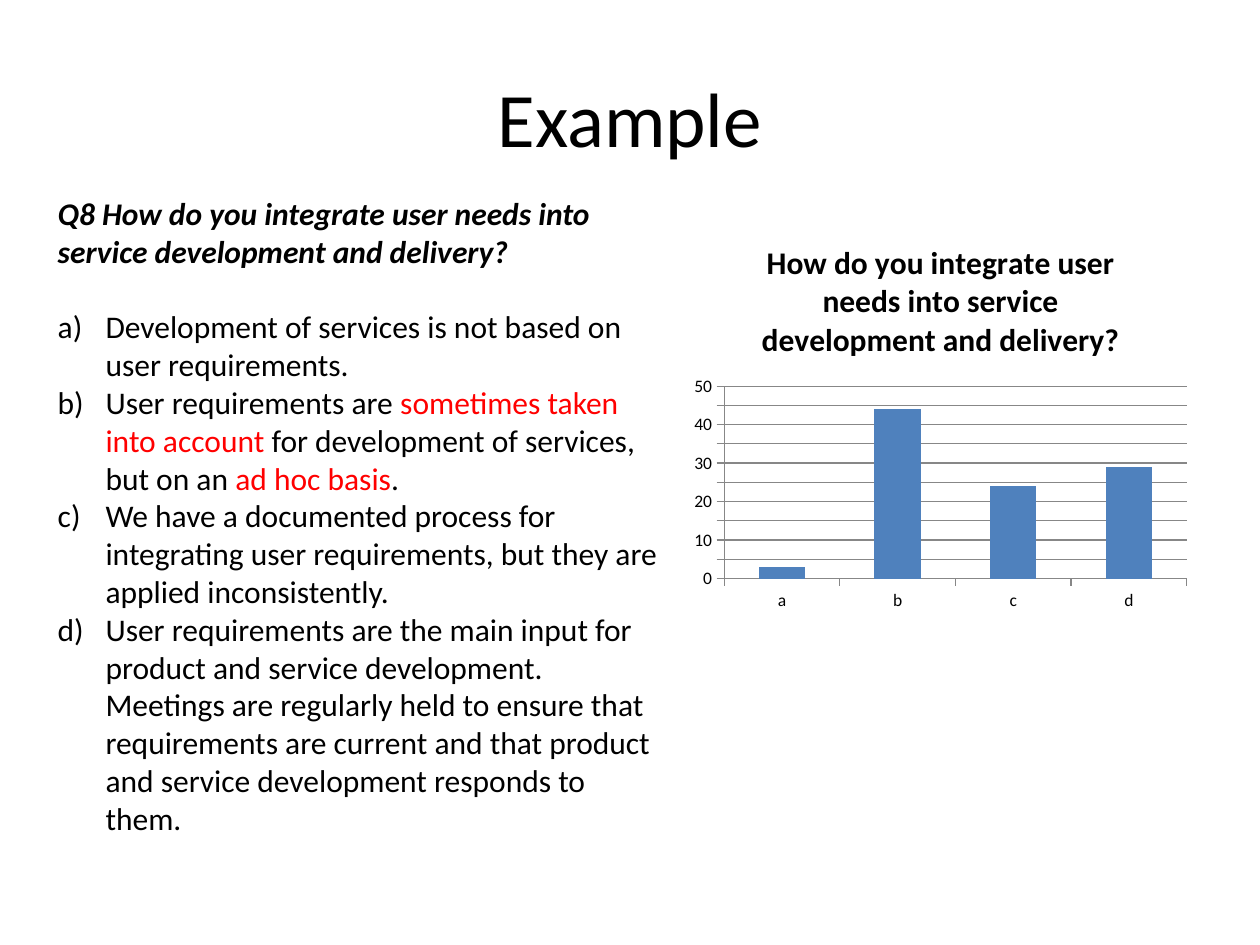
from pptx import Presentation
from pptx.chart.data import CategoryChartData
from pptx.dml.color import RGBColor
from pptx.enum.chart import XL_CHART_TYPE as ChartType, XL_TICK_MARK as Tick
from pptx.enum.text import MSO_ANCHOR as Anchor, PP_ALIGN as Align
from pptx.oxml.ns import qn
from pptx.util import Inches, Pt

BLACK = RGBColor(0x00, 0x00, 0x00)
RED = RGBColor(0xFF, 0x00, 0x00)
BLUE = RGBColor(0x4F, 0x81, 0xBD)
GREY = RGBColor(0x87, 0x87, 0x87)

QUESTION = "How do you integrate user needs into service development and delivery?"
# Each answer is a list of (text, colour) runs
ANSWERS = [
    [("Development of services is not based on user requirements.", BLACK)],
    [("User requirements are ", BLACK), ("sometimes taken into account ", RED),
     ("for development of services, but on an ", BLACK),
     ("ad hoc basis", RED), (".", BLACK)],
    [("We have a documented process for integrating user requirements, "
      "but they are applied inconsistently.", BLACK)],
    [("User requirements are the main input for product and service development. "
      "Meetings are regularly held to ensure that requirements are current and "
      "that product and service development responds to them.", BLACK)],
]


class SlideBuilder:
    font = "Calibri"
    indent = Inches(0.38)

    def __init__(self, s):
        self.s = s

    def style(self, font, size, color=BLACK, bold=False, italic=False):
        font.name, font.size = self.font, Pt(size)
        font.bold, font.italic = bold, italic
        font.color.rgb = color

    def run(self, p, text, size, **look):
        r = p.add_run()
        r.text = text
        self.style(r.font, size, **look)

    def text_box(self, x, y, w, h, anchor=Anchor.TOP):
        box = self.s.shapes.add_textbox(Inches(x), Inches(y), Inches(w), Inches(h))
        tf = box.text_frame
        tf.word_wrap = True
        tf.vertical_anchor = anchor
        return tf

    def lettered(self, tf, runs, size):
        p = tf.add_paragraph()
        pPr = p._p.get_or_add_pPr()
        pPr.set("marL", str(self.indent))
        pPr.set("indent", str(-self.indent))
        bullet = pPr.makeelement(qn("a:buAutoNum"), {"type": "alphaLcParenR"})
        pPr.append(bullet)
        for text, color in runs:
            self.run(p, text, size, color=color)
        return p

    def column_chart(self, x, y, w, h, title, cats, vals):
        data = CategoryChartData()
        data.categories = cats
        data.add_series(title, vals)
        chart = self.s.shapes.add_chart(
            ChartType.COLUMN_CLUSTERED, Inches(x), Inches(y), Inches(w), Inches(h),
            data).chart
        self.style(chart.font, 10)
        chart.has_legend = False
        chart.has_title = True
        self.run(chart.chart_title.text_frame.paragraphs[0], title, 18, bold=True)

        plot = chart.plots[0]
        plot.gap_width = 150
        plot.vary_by_categories = False
        fill = plot.series[0].format.fill
        fill.solid()
        fill.fore_color.rgb = BLUE

        value_axis = chart.value_axis
        value_axis.minimum_scale, value_axis.maximum_scale = 0, 50
        value_axis.major_unit = 5
        value_axis.has_major_gridlines = True
        for axis in (chart.category_axis, value_axis):
            axis.major_tick_mark = Tick.OUTSIDE
            axis.format.line.color.rgb = GREY
        value_axis.major_gridlines.format.line.color.rgb = GREY


def main():
    prs = Presentation()
    prs.slide_width, prs.slide_height = Inches(10), Inches(7.5)
    slide = SlideBuilder(prs.slides.add_slide(prs.slide_layouts[6]))

    # Title
    p = slide.text_box(0.5, 0.3, 9, 1.25, Anchor.MIDDLE).paragraphs[0]
    p.alignment = Align.CENTER
    slide.run(p, "Example", 44)

    # Chart of the answers
    slide.column_chart(5.43, 1.75, 4.07, 3.16, QUESTION,
                       ["a", "b", "c", "d"], [3, 44, 24, 29])

    # Question and lettered answers
    tf = slide.text_box(0.36, 1.49, 5, 5.25)
    p = tf.paragraphs[0]
    slide.run(p, "Q8 " + QUESTION, 18, bold=True, italic=True)
    p.space_after = Pt(21.6)
    for runs in ANSWERS:
        slide.lettered(tf, runs, 18)

    prs.save("out.pptx")


if __name__ == "__main__":
    main()
